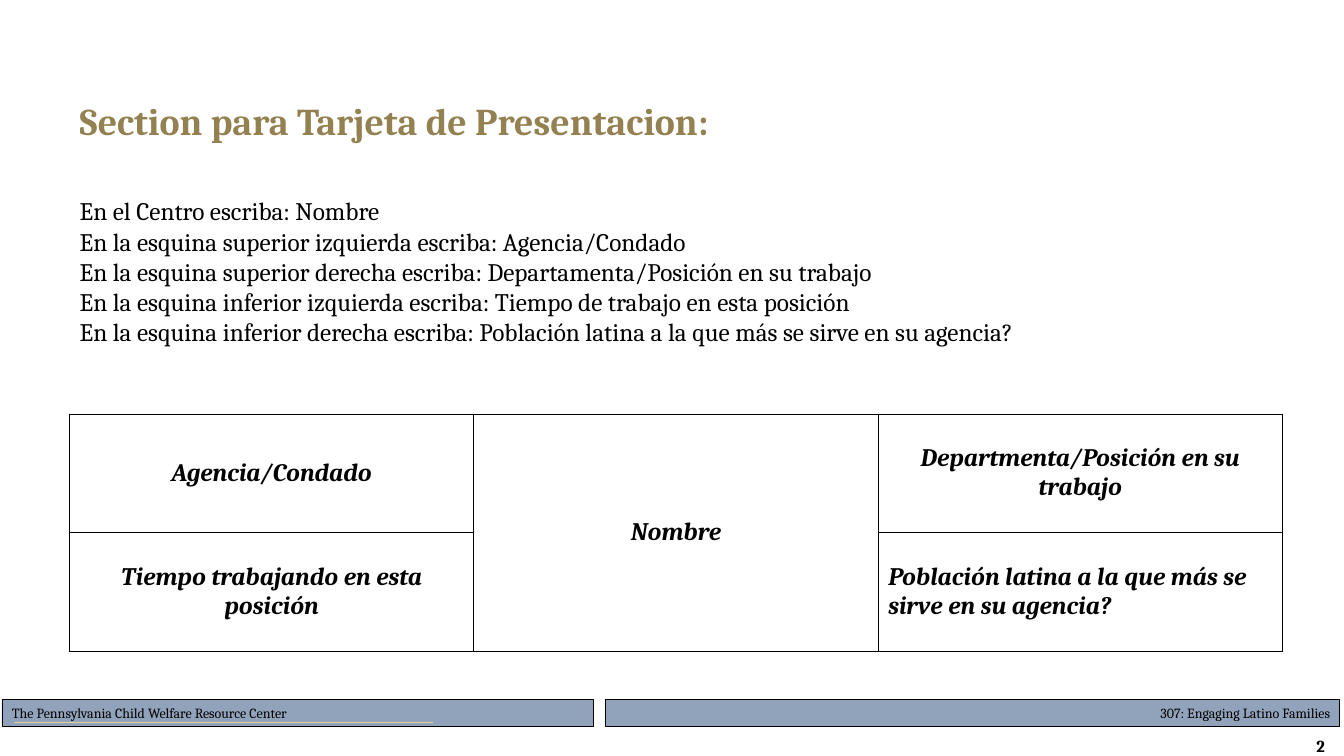
from lxml import etree
from pptx import Presentation
from pptx import util as u
from pptx.dml.color import RGBColor
from pptx.enum import shapes, text
from pptx.oxml import ns

PX = 9144
FORMAT = {"name": "Cambria", "size": u.Pt(18), "bold": False, "italic": False}
BLACK, WHITE, GOLD, PALE_GOLD, BLUE = "000000", "FFFFFF", "948151", "E5D199", "91A3BB"
LEFT, CENTER, RIGHT = text.PP_ALIGN.LEFT, text.PP_ALIGN.CENTER, text.PP_ALIGN.RIGHT

INSTRUCTIONS = [
    "En el Centro escriba: Nombre",
    "En la esquina superior izquierda escriba: Agencia/Condado",
    "En la esquina superior derecha escriba: Departamenta/Posición en su trabajo",
    "En la esquina inferior izquierda escriba: Tiempo de trabajo en esta posición",
    "En la esquina inferior derecha escriba: Población latina a la que más se sirve en su agencia?",
]
CARD = {
    (0, 0): ("Agencia/Condado", CENTER),
    (0, 1): ("Nombre", CENTER),
    (0, 2): ("Departmenta/Posición en su trabajo", CENTER),
    (1, 0): ("Tiempo trabajando en esta posición", CENTER),
    (1, 2): ("Población latina a la que más se sirve en su agencia?", LEFT),
}


def px(*lengths):
    """Turn px lengths into EMU."""
    return [u.Emu(length * PX) for length in lengths]


def paint(color_format, color):
    """Apply a hex colour to a fill, a line fill or a font fill."""
    color_format.solid()
    color_format.fore_color.rgb = RGBColor.from_string(color)


def place(part, box):
    """Move a placeholder into the given px box."""
    for side, length in zip(("left", "top", "width", "height"), px(*box)):
        setattr(part, side, length)


def write(frame, lines, color=BLACK, align=LEFT, anchor=text.MSO_ANCHOR.MIDDLE, **changes):
    """Fill a text frame with formatted paragraphs."""
    frame.word_wrap = True
    frame.auto_size = text.MSO_AUTO_SIZE.NONE
    frame.vertical_anchor = anchor
    for index, line in enumerate(lines):
        paragraph = frame.paragraphs[0] if index == 0 else frame.add_paragraph()
        style_line(paragraph, line, color, align, **changes)


def style_line(paragraph, line, color, align, **changes):
    """Write one line of text with its format."""
    properties = paragraph._p.get_or_add_pPr()
    properties.set("marL", "0")
    properties.set("indent", "0")
    etree.SubElement(properties, ns.qn("a:buNone"))
    paragraph.alignment = align
    paragraph.space_before = u.Pt(0)
    run = paragraph.add_run()
    run.text = line
    for key, value in {**FORMAT, **changes}.items():
        setattr(run.font, key, value)
    paint(run.font.fill, color)


def add_heading(slide, box):
    """Place the slide title."""
    place(slide.shapes.title, box)
    write(slide.shapes.title.text_frame, ["Section para Tarjeta de Presentacion:"],
          GOLD, size=u.Pt(27), bold=True)


def add_instructions(slide, box):
    """Place the list of instructions in the body placeholder."""
    body = slide.placeholders[1]
    place(body, box)
    write(body.text_frame, INSTRUCTIONS, anchor=text.MSO_ANCHOR.TOP)


def border(cell):
    """Draw a thin black line on each side of a cell."""
    properties = cell._tc.get_or_add_tcPr()
    for index, side in enumerate(("lnL", "lnR", "lnT", "lnB")):
        edge = etree.Element(ns.qn(f"a:{side}"), w=str(u.Pt(1)))
        fill = etree.SubElement(edge, ns.qn("a:solidFill"))
        etree.SubElement(fill, ns.qn("a:srgbClr"), val=BLACK)
        properties.insert(index, edge)


def add_card(slide, box):
    """Place the card table, with the name across both middle rows."""
    card = slide.shapes.add_table(2, 3, *px(*box)).table
    card.first_row = card.horz_banding = False
    for row, height in zip(card.rows, px(117, 118)):
        row.height = height
    card.cell(0, 1).merge(card.cell(1, 1))
    for row in range(2):
        for column in range(3):
            cell = card.cell(row, column)
            paint(cell.fill, WHITE)
            border(cell)
            if (row, column) in CARD:
                label, align = CARD[row, column]
                cell.vertical_anchor = text.MSO_ANCHOR.MIDDLE
                style_line(cell.text_frame.paragraphs[0], label, BLACK, align,
                           bold=True, italic=True)


def add_bar(slide, box, label, align, weight):
    """Place one labelled footer bar."""
    bar = slide.shapes.add_shape(shapes.MSO_SHAPE.RECTANGLE, *px(*box))
    bar.shadow.inherit = False
    paint(bar.fill, BLUE)
    paint(bar.line.fill, BLACK)
    bar.line.width = u.Pt(weight)
    write(bar.text_frame, [label], align=align, size=u.Pt(10))


def add_footer(slide, box):
    """Place the footer bars, the gold rule and the page number."""
    left, top, width, height = box
    center_width, gap = 587, 12
    course_left = left + center_width + gap
    add_bar(slide, (course_left, top, left + width - course_left, height),
            "307: Engaging Latino Families", RIGHT, 0.75)
    add_bar(slide, (left, top, center_width, height),
            "The Pennsylvania Child Welfare Resource Center", LEFT, 0.5)
    rule = slide.shapes.add_connector(
        shapes.MSO_CONNECTOR.STRAIGHT,
        *px(left + 12, top + 23, left + 427, top + 23))
    paint(rule.line.fill, PALE_GOLD)
    rule.line.width = u.Pt(0.75)
    etree.SubElement(rule._element.spPr, ns.qn("a:effectLst"))
    page = slide.shapes.add_textbox(*px(left + 1211, top + 36, 111, 20))
    write(page.text_frame, ["2"], align=RIGHT, size=u.Pt(12), bold=True)


def main():
    """Build and save the slide."""
    deck = Presentation()
    deck.slide_width, deck.slide_height = px(1333, 750)
    slide = deck.slides.add_slide(deck.slide_layouts[1])
    add_footer(slide, (2, 694, 1327, 27))
    add_heading(slide, (69, 87, 1200, 65))
    add_card(slide, (69, 411, 1203, 235))
    add_instructions(slide, (69, 189, 1200, 192))
    deck.save("out.pptx")


if __name__ == "__main__":
    main()
